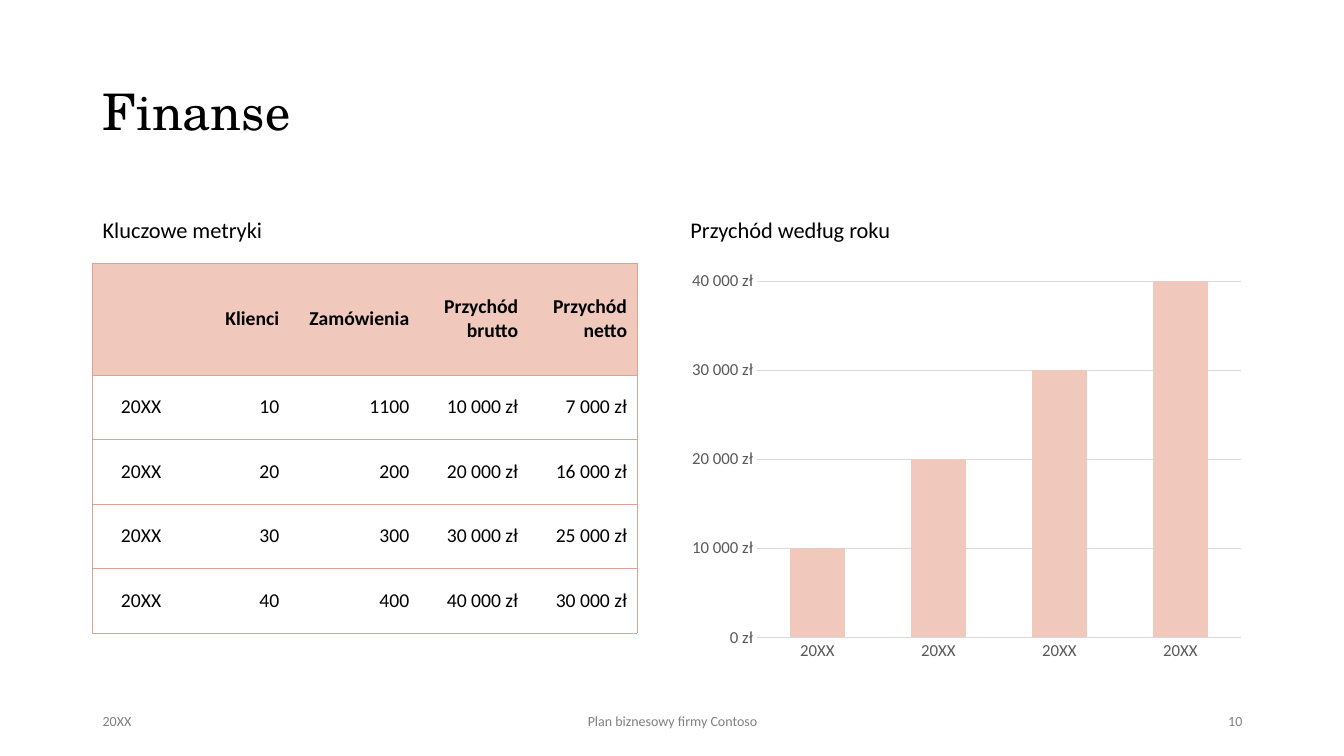
from pptx import Presentation
from pptx.chart.data import CategoryChartData
from pptx.dml.color import RGBColor
from pptx.enum.chart import XL_CHART_TYPE, XL_TICK_MARK
from pptx.enum.text import MSO_ANCHOR, PP_ALIGN
from pptx.oxml import parse_xml
from pptx.oxml.ns import nsdecls
from pptx.util import Pt

PX = 9144
PINK, ROSE, GRID = "F0C8BC", "D9A491", "D9D9D9"
LEFT, MID, RIGHT = PP_ALIGN.LEFT, PP_ALIGN.CENTER, PP_ALIGN.RIGHT


def paint(color, value):
    color.rgb = RGBColor.from_string(value)


def style(font, size, value="000000", name="Calibri", bold=False):
    font.size = Pt(size)
    font.name = name
    font.bold = bold
    paint(font.color, value)


deck = Presentation()
deck.slide_width, deck.slide_height = 1333 * PX, 750 * PX
slide = deck.slides.add_slide(deck.slide_layouts[6])

labels = [
    ("Finanse", 92, 78, 1150, 70, LEFT, 36, "000000", "TeX Gyre Schola", 0.9),
    ("Kluczowe metryki", 92, 199, 564, 60, LEFT, 16, "000000", "Calibri", 0.9),
    ("Przychód według roku", 675, 199, 567, 60, LEFT, 16, "000000", "Calibri", 0.9),
    ("20XX", 92, 695, 300, 40, LEFT, 10, "808080", "Calibri", 1.0),
    ("Plan biznesowy firmy Contoso", 442, 695, 450, 40, MID, 10, "808080", "Calibri", 1.0),
    ("10", 942, 695, 300, 40, RIGHT, 10, "808080", "Calibri", 1.0),
]
for text, x, y, w, h, align, size, value, name, space in labels:
    frame = slide.shapes.add_textbox(x * PX, y * PX, w * PX, h * PX).text_frame
    frame.word_wrap = True
    frame.vertical_anchor = MSO_ANCHOR.MIDDLE
    frame.text = text
    line = frame.paragraphs[0]
    line.alignment = align
    line.line_spacing = space
    style(line.runs[0].font, size, value, name)

rows = [
    ["", "Klienci", "Zamówienia", "Przychód brutto", "Przychód netto"],
    ["20XX", "10", "1100", "10 000 zł", "7 000 zł"],
    ["20XX", "20", "200", "20 000 zł", "16 000 zł"],
    ["20XX", "30", "300", "30 000 zł", "25 000 zł"],
    ["20XX", "40", "400", "40 000 zł", "30 000 zł"],
]
widths = [96, 99, 129, 108, 108]
heights = [111] + [64] * 4
table = slide.shapes.add_table(
    len(rows), len(widths), 92 * PX, 261 * PX, sum(widths) * PX, sum(heights) * PX
).table
table.horz_banding = False
for col, width in zip(table.columns, widths):
    col.width = width * PX
for row, height in zip(table.rows, heights):
    row.height = height * PX

solid = f'<a:solidFill><a:srgbClr val="{ROSE}"/></a:solidFill>'
for r, row in enumerate(rows):
    for c, text in enumerate(row):
        cell = table.cell(r, c)
        cell.vertical_anchor = MSO_ANCHOR.MIDDLE
        edges = {"L": c == 0, "R": c == len(row) - 1, "T": True, "B": True}
        props = cell._tc.get_or_add_tcPr()
        for side, shown in edges.items():
            fill = solid if shown else "<a:noFill/>"
            props.append(parse_xml(f'<a:ln{side} {nsdecls("a")} w="6350">{fill}</a:ln{side}>'))
        if r == 0:
            cell.fill.solid()
            paint(cell.fill.fore_color, PINK)
        else:
            cell.fill.background()
        cell.text_frame.text = text
        line = cell.text_frame.paragraphs[0]
        line.alignment = RIGHT if c else MID
        for run in line.runs:
            style(run.font, 14, bold=r == 0)

data = CategoryChartData()
data.categories = ["20XX"] * 4
data.add_series("Series 1", [10000, 20000, 30000, 40000])
chart = slide.shapes.add_chart(
    XL_CHART_TYPE.COLUMN_CLUSTERED, 675 * PX, 261 * PX, 567 * PX, 403 * PX, data
).chart
chart.has_legend = False
chart.has_title = False
style(chart.font, 10, name="Roboto")

plot = chart.plots[0]
plot.vary_by_categories = False
plot.gap_width = 118
plot.overlap = -3
bars = plot.series[0].format.fill
bars.solid()
paint(bars.fore_color, PINK)

years, money = chart.category_axis, chart.value_axis
for axis in (years, money):
    axis.major_tick_mark = XL_TICK_MARK.NONE
    axis.minor_tick_mark = XL_TICK_MARK.NONE
    style(axis.tick_labels.font, 12, "595959")
money.minimum_scale = 0
money.maximum_scale = 40000
money.major_unit = 10000
money.tick_labels.number_format = '#\\ ##0\\ "zł"'
money.tick_labels.number_format_is_linked = False
money.format.line.fill.background()
for rule in (years.format.line, money.major_gridlines.format.line):
    rule.width = Pt(0.75)
    paint(rule.color, GRID)

deck.save("out.pptx")
